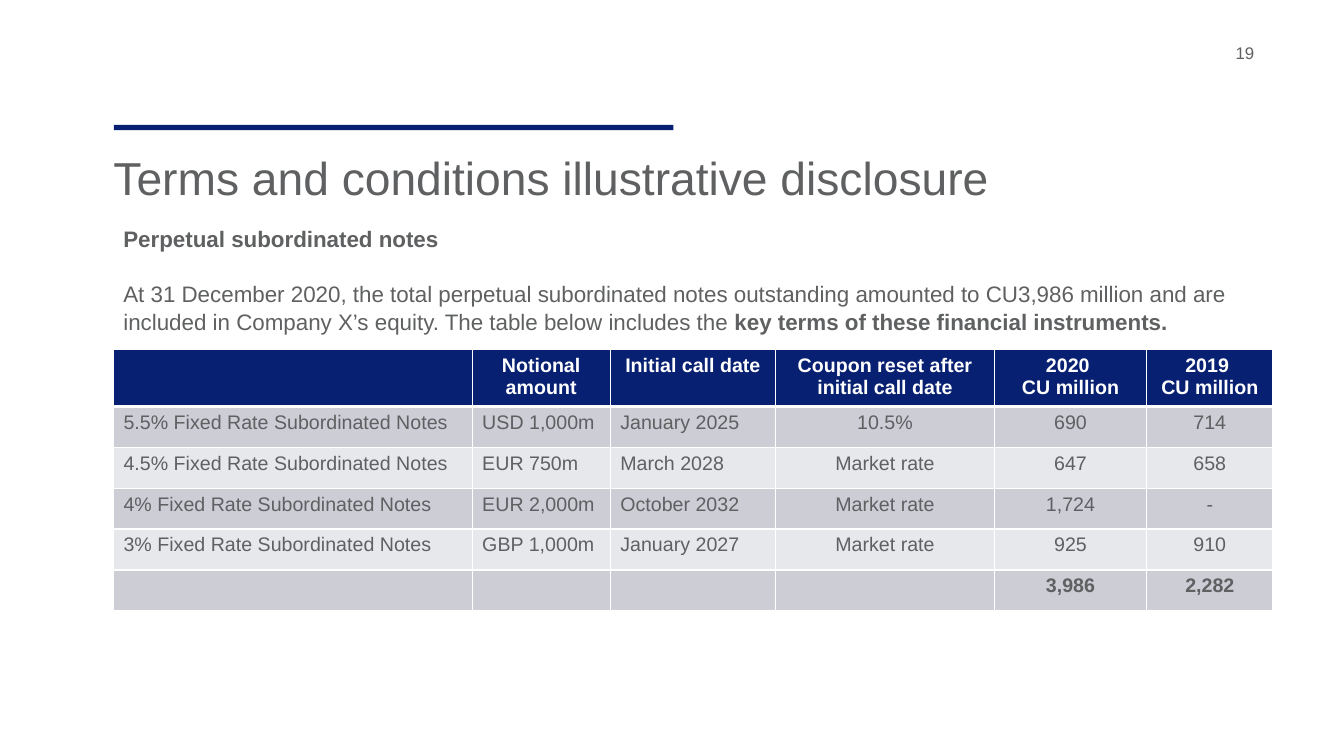
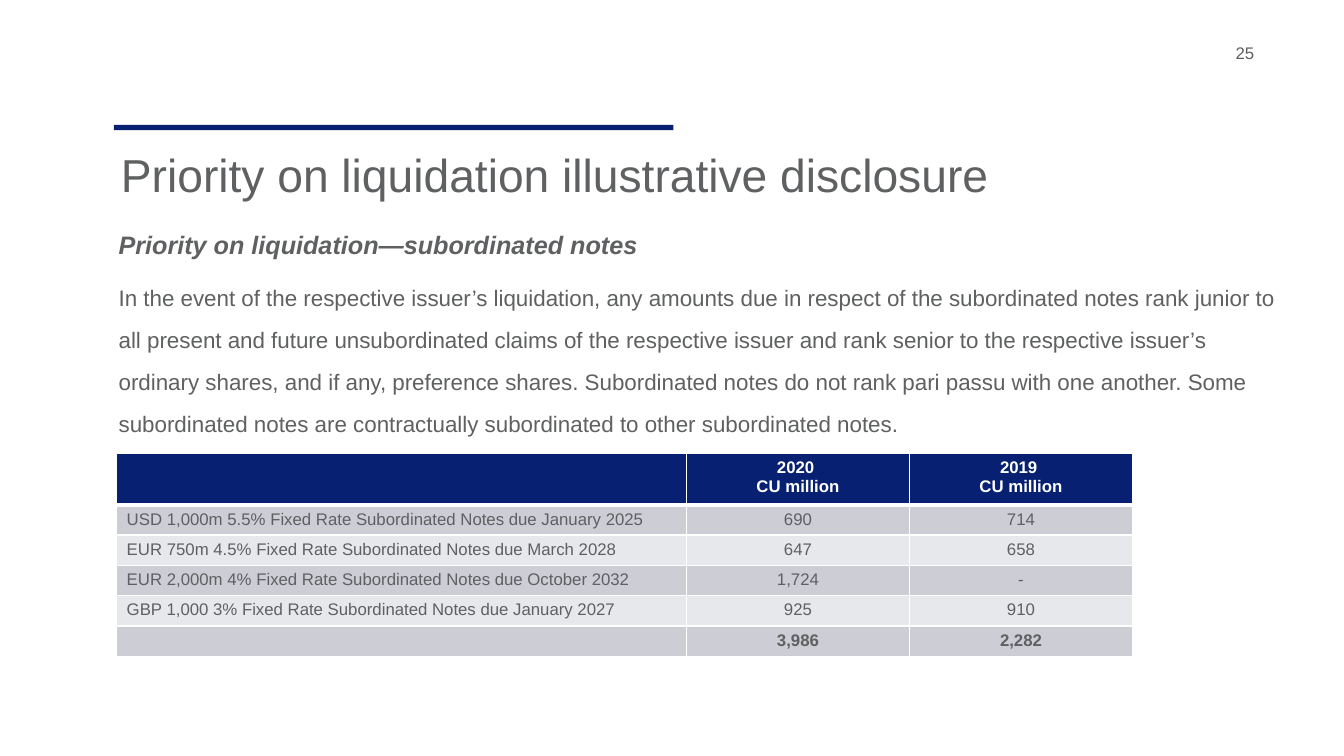
"""Build two slides on subordinated notes disclosures."""
from dataclasses import dataclass

from lxml import etree
from pptx import Presentation
from pptx import util as u
from pptx.dml.color import RGBColor
from pptx.enum import shapes, text
from pptx.oxml.ns import qn


@dataclass(frozen=True)
class Theme:
    """Colours, type sizes and spacing used by every slide."""
    font: str = "Arial"
    navy: str = "072071"
    grey: str = "5F6061"
    white: str = "FFFFFF"
    bands: tuple = ("CCCDD5", "E7E8EB")
    title: int = 33
    lead: int = 18
    body: int = 16
    cell: int = 14
    small: int = 12
    line: float = 1.05
    loose: float = 1.57
    rule: int = 1
    thick: int = 3


T = Theme()
LEFT = text.PP_ALIGN.LEFT
MID = text.PP_ALIGN.CENTER
YEARS = ["2020 \nCU million", "2019 \nCU million"]
SUMS = [["690", "714"], ["647", "658"], ["1,724", "-"], ["925", "910"]]
TOTAL = ["3,986", "2,282"]


def rgb(code):
    """Turn a hex code into a colour."""
    return RGBColor.from_string(code)


def write(para, words, size=T.body, color=T.grey, bold=False, italic=False,
          align=LEFT, line=T.line, before=0, after=0):
    """Add words to a paragraph in the given format."""
    para.alignment = align
    para.line_spacing = line
    para.space_before = u.Pt(before)
    para.space_after = u.Pt(after)
    for i, part in enumerate(words.split("\n")):
        if i:
            para.add_line_break()
        run = para.add_run()
        run.text = part
        font = run.font
        font.name, font.size = T.font, u.Pt(size)
        font.bold, font.italic = bold, italic
        font.color.rgb = rgb(color)


def box(slide, left, top, width, height, inset=True):
    """Add a wrapping text box and return its frame."""
    area = [u.Cm(n) for n in (left, top, width, height)]
    frame = slide.shapes.add_textbox(*area).text_frame
    frame.word_wrap = True
    if not inset:
        frame.margin_left = frame.margin_right = 0
        frame.margin_top = frame.margin_bottom = 0
    return frame


def start(deck, title, page, left, top):
    """Add a slide with its bar, title and page number."""
    slide = deck.slides.add_slide(deck.slide_layouts[6])
    bar = slide.shapes.add_shape(shapes.MSO_SHAPE.RECTANGLE, u.Cm(2.87),
                                 u.Cm(3.15), u.Cm(14.1), u.Cm(0.13))
    bar.shadow.inherit = False
    bar.fill.solid()
    bar.fill.fore_color.rgb = rgb(T.navy)
    bar.line.fill.background()
    head = box(slide, left, top, 25.5, 1.9, inset=False)
    write(head.paragraphs[0], title, size=T.title)
    foot = box(slide, 31.14, 1.04, 1.7, 0.74, inset=False)
    write(foot.paragraphs[0], str(page), size=T.small)
    return slide


def edge(cell, side, width):
    """Draw one white border of a cell."""
    props = cell._tc.get_or_add_tcPr()
    line = etree.SubElement(props, qn("a:ln" + side), w=str(u.Pt(width)))
    fill = etree.SubElement(line, qn("a:solidFill"))
    etree.SubElement(fill, qn("a:srgbClr"), val=T.white)


def grid(slide, rows, left, top, cols, first, high, size, lefts):
    """Add a banded table with a header row and a bold total row."""
    last = len(rows) - 1
    frame = slide.shapes.add_table(
        len(rows), len(cols), u.Cm(left), u.Cm(top), u.Cm(sum(cols)),
        u.Cm(first + high * last))
    table = frame.table
    table.first_row = table.horz_banding = False
    for col, width in zip(table.columns, cols):
        col.width = u.Cm(width)
    for r, row in enumerate(rows):
        table.rows[r].height = u.Cm(high if r else first)
        for c, words in enumerate(row):
            cell = table.cell(r, c)
            for side in "LRTB":
                wide = (r, side) in ((0, "B"), (1, "T"))
                edge(cell, side, T.thick if wide else T.rule)
            cell.fill.solid()
            cell.fill.fore_color.rgb = rgb(
                T.bands[(r - 1) % 2] if r else T.navy)
            para = cell.text_frame.paragraphs[0]
            if words:
                write(para, words, size=size, line=1.0,
                      color=T.grey if r else T.white, bold=r in (0, last),
                      align=LEFT if r and c < lefts else MID)
            else:
                etree.SubElement(para._p, qn("a:endParaRPr"),
                                 sz=str(size * 100))


def terms(deck):
    """Build the slide on terms and conditions."""
    slide = start(deck, "Terms and conditions illustrative disclosure", 19,
                  2.86, 3.7)
    frame = box(slide, 2.86, 5.51, 29.82, 3.2)
    write(frame.paragraphs[0], "Perpetual subordinated notes", bold=True)
    para = frame.add_paragraph()
    write(para, "At 31 December 2020, the total perpetual subordinated notes "
          "outstanding amounted to CU3,986 million and are included in "
          "Company X’s equity. The table below includes the ")
    write(para, "key terms of these financial instruments.", bold=True,
          before=19)
    notes = [
        ["5.5%", "USD 1,000m", "January 2025", "10.5%"],
        ["4.5%", "EUR 750m", "March 2028", "Market rate"],
        ["4%", "EUR 2,000m", "October 2032", "Market rate"],
        ["3%", "GBP 1,000m", "January 2027", "Market rate"],
    ]
    rows = [["", "Notional amount", "Initial call date",
             "Coupon reset after initial call date"] + YEARS]
    rows += [[f"{rate} Fixed Rate Subordinated Notes"] + rest + sums
             for (rate, *rest), sums in zip(notes, SUMS)]
    rows.append([""] * 4 + TOTAL)
    grid(slide, rows, 2.86, 8.8, [9.04, 3.48, 4.17, 5.51, 3.84, 3.18],
         1.37, 1.03, T.cell, 3)


def rank(deck):
    """Build the slide on priority on liquidation."""
    slide = start(deck, "Priority on liquidation illustrative disclosure", 25,
                  3.05, 3.63)
    frame = box(slide, 2.74, 5.23, 29.82, 5.9)
    write(frame.paragraphs[0], "Priority on liquidation—subordinated notes",
          size=T.lead, bold=True, italic=True, line=T.loose)
    write(frame.add_paragraph(),
          "In the event of the respective issuer’s liquidation, any amounts "
          "due in respect of the subordinated notes rank junior to all "
          "present and future unsubordinated claims of the respective issuer "
          "and rank senior to the respective issuer’s ordinary shares, and if "
          "any, preference shares. Subordinated notes do not rank pari passu "
          "with one another. Some subordinated notes are contractually "
          "subordinated to other subordinated notes.",
          line=T.loose, before=6, after=6)
    notes = [("USD 1,000m 5.5%", "January 2025"),
             ("EUR 750m 4.5%", "March 2028"),
             ("EUR 2,000m 4%", "October 2032"),
             ("GBP 1,000 3%", "January 2027")]
    rows = [[""] + YEARS]
    rows += [[f"{name} Fixed Rate Subordinated Notes due {due}"] + sums
             for (name, due), sums in zip(notes, SUMS)]
    rows.append([""] + TOTAL)
    grid(slide, rows, 2.94, 11.43, [14.36, 5.62, 5.62], 1.29, 0.76,
         T.small, 1)


def main():
    """Build and save the deck."""
    deck = Presentation()
    deck.slide_width, deck.slide_height = u.Cm(33.87), u.Cm(19.05)
    terms(deck)
    rank(deck)
    deck.save("out.pptx")


if __name__ == "__main__":
    main()
